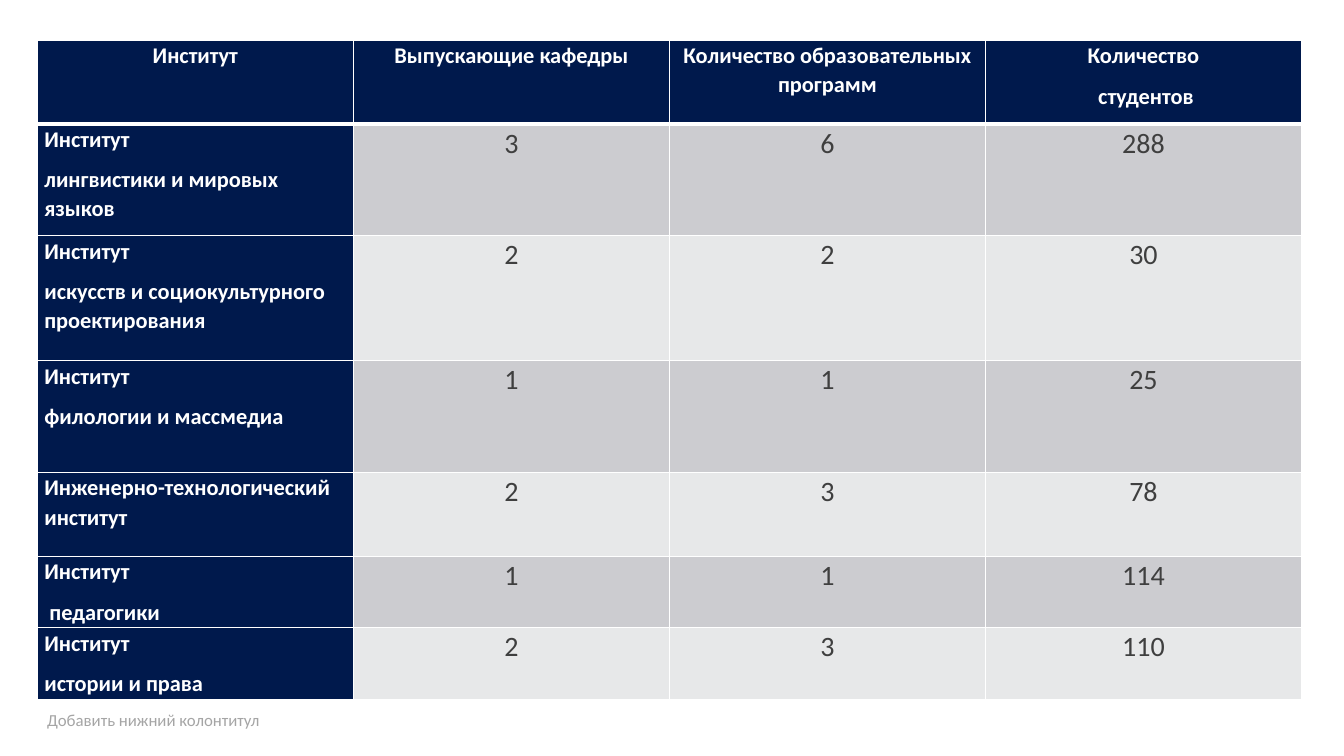
import pptx
import pptx.util
import pptx.dml.color
import pptx.enum.text
import pptx.oxml

HEADERS = [
    ["Институт"],
    ["Выпускающие кафедры"],
    ["Количество образовательных программ"],
    ["Количество", " студентов"],
]
INSTITUTES = [
    (["Институт", "лингвистики и мировых языков"], 3, 6, 288),
    (["Институт", "искусств и социокультурного проектирования"], 2, 2, 30),
    (["Институт", "филологии и массмедиа"], 1, 1, 25),
    (["Инженерно-технологический институт"], 2, 3, 78),
    (["Институт", " педагогики"], 1, 1, 114),
    (["Институт", "истории и права"], 2, 3, 110),
]
FOOTER = "Добавить нижний колонтитул"

COLORS = {
    "navy": "00194C", "white": "FFFFFF", "dark": "3F3F3F",
    "band_odd": "CCCCD0", "band_even": "E7E8E9", "footer": "A5A5A5",
}
LABEL = {"size": 16, "bold": True, "color": "white"}
NUMBER = {"size": 20, "bold": False, "color": "dark"}
FOOTNOTE = {"size": 12, "bold": False, "color": "footer"}

SLIDE_W, SLIDE_H = 13.33, 7.5
LEFT, TOP, TABLE_W = 0.37, 0.4, 12.54
ROW_HEIGHTS = [0.83, 1.11, 1.24, 1.11, 0.83, 0.71, 0.71]
FOOTER_W, FOOTER_H = 4.5, 0.4
CELL_FORMAT = {
    "margin_left": pptx.util.Inches(0.07), "margin_right": pptx.util.Inches(0.07),
    "margin_top": 0, "margin_bottom": 0,
}
ALIGN = pptx.enum.text.PP_ALIGN
CELL_SPACING = {"line_spacing": 1.07, "space_after": pptx.util.Pt(8)}
FOOTER_SPACING = {"space_after": pptx.util.Pt(6)}


def rgb(name):
    return pptx.dml.color.RGBColor.from_string(COLORS[name])


def write(tf, lines, style, align, spacing):
    for i, line in enumerate(lines):
        p = tf.paragraphs[0] if i == 0 else tf.add_paragraph()
        for key, value in {"alignment": align, **spacing}.items():
            setattr(p, key, value)
        r = p.add_run()
        r.text = line
        font = {"name": "Calibri", "size": pptx.util.Pt(style["size"]), "bold": style["bold"]}
        for key, value in font.items():
            setattr(r.font, key, value)
        r.font.color.rgb = rgb(style["color"])


def add_borders(cell, widths):
    tc_pr = cell._tc.get_or_add_tcPr()
    for i, (side, width) in enumerate(widths.items()):
        tc_pr.insert(i, pptx.oxml.parse_xml(
            f'<a:ln{side} xmlns:a="http://schemas.openxmlformats.org/drawingml/2006/main" '
            f'w="{pptx.util.Pt(width)}"><a:solidFill><a:srgbClr val="{COLORS["white"]}"/>'
            f'</a:solidFill></a:ln{side}>'))


def add_footer(s):
    box = s.shapes.add_textbox(*map(pptx.util.Inches, (
        LEFT, TOP + sum(ROW_HEIGHTS), FOOTER_W, FOOTER_H)))
    tf = box.text_frame
    tf.word_wrap = True
    tf.vertical_anchor = pptx.enum.text.MSO_ANCHOR.MIDDLE
    write(tf, [FOOTER], FOOTNOTE, ALIGN.LEFT, FOOTER_SPACING)


def add_institutes(s):
    rows = [HEADERS] + [[name] + [[str(n)] for n in counts] for name, *counts in INSTITUTES]
    frame = s.shapes.add_table(len(rows), len(HEADERS), *map(pptx.util.Inches, (
        LEFT, TOP, TABLE_W, sum(ROW_HEIGHTS))))
    table = frame.table
    table.first_col = True
    for col in table.columns:
        col.width = pptx.util.Inches(TABLE_W / len(HEADERS))
    for i, row in enumerate(rows):
        table.rows[i].height = pptx.util.Inches(ROW_HEIGHTS[i])
        for j, lines in enumerate(row):
            cell = table.cell(i, j)
            is_label = i == 0 or j == 0
            fill = "navy" if is_label else "band_odd" if i % 2 else "band_even"
            for key, value in CELL_FORMAT.items():
                setattr(cell, key, value)
            cell.fill.solid()
            cell.fill.fore_color.rgb = rgb(fill)
            align = ALIGN.LEFT if i and j == 0 else ALIGN.CENTER
            write(cell.text_frame, lines, LABEL if is_label else NUMBER, align, CELL_SPACING)
            add_borders(cell, {"L": 1, "R": 1, "T": 3 if i == 1 else 1, "B": 3 if i == 0 else 1})


def main():
    prs = pptx.Presentation()
    prs.slide_width = pptx.util.Inches(SLIDE_W)
    prs.slide_height = pptx.util.Inches(SLIDE_H)
    s = prs.slides.add_slide(prs.slide_layouts[6])
    s.background.fill.solid()
    s.background.fill.fore_color.rgb = rgb("white")
    add_footer(s)
    add_institutes(s)
    prs.save("out.pptx")


if __name__ == "__main__":
    main()
